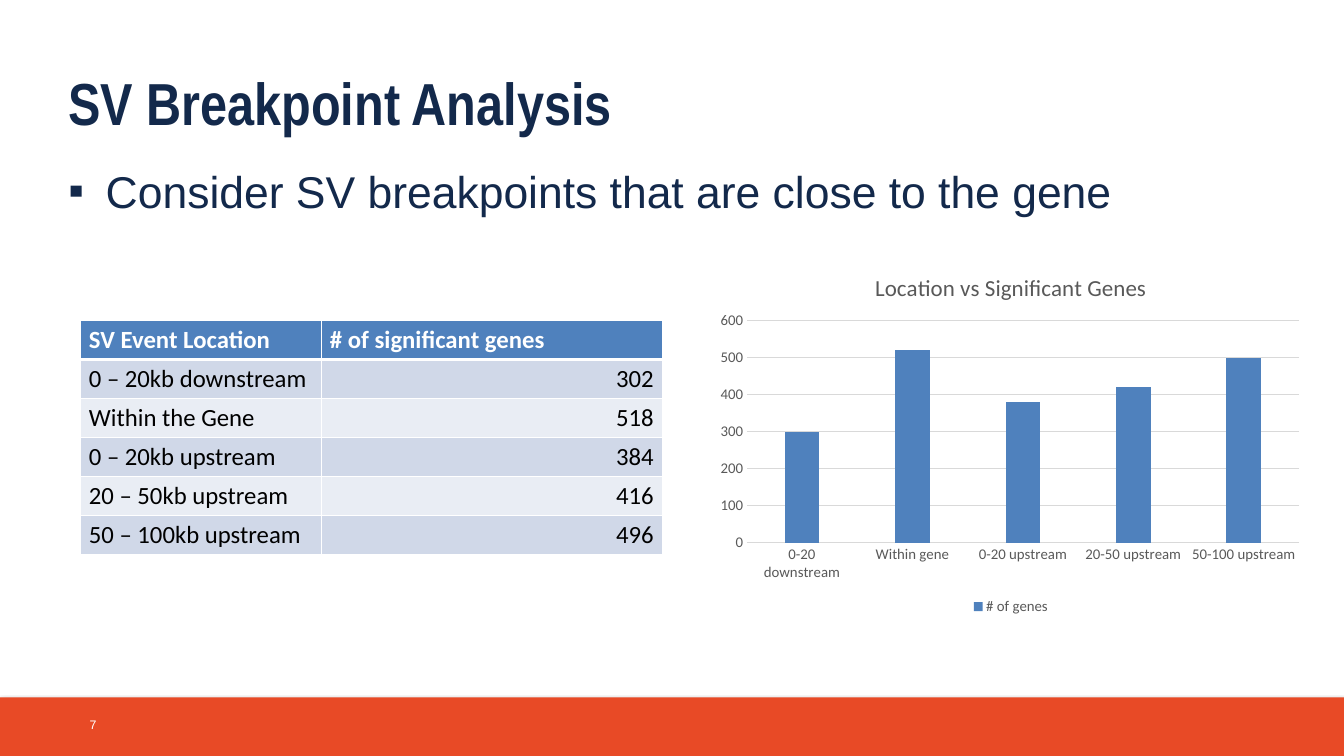
import pptx
import pptx.chart.data
import pptx.dml.color
import pptx.enum.chart
import pptx.enum.shapes
import pptx.enum.text
import pptx.oxml
import pptx.util
from pptx.util import Inches

# Content
TITLE = "SV Breakpoint Analysis"
POINT = "Consider SV breakpoints that are close to the gene"
PAGE_NUMBER = "7"
HEADINGS = ("SV Event Location", "# of significant genes")
CHART_TITLE = "Location vs Significant Genes"
SERIES_NAME = "# of genes"
LOCATIONS = [  # table label, chart label, significant genes
    ("0 – 20kb downstream", "0-20 downstream", 302),
    ("Within the Gene", "Within gene", 518),
    ("0 – 20kb upstream", "0-20 upstream", 384),
    ("20 – 50kb upstream", "20-50 upstream", 416),
    ("50 – 100kb upstream", "50-100 upstream", 496),
]
COLORS = {
    "navy": "13294B", "orange": "E84A26", "blue": "4F81BD", "white": "FFFFFF",
    "black": "000000", "band_dark": "D0D8E8", "band_light": "E9EDF4",
    "grey": "595959", "grid": "D9D9D9",
}
COLUMN_WIDTHS = (2.71, 3.84)
ROW_HEIGHT = 0.44
PLOT_AREA = {"x": 0.06, "y": 0.18, "w": 0.92, "h": 0.61}  # shares of the chart
NS = 'xmlns:a="http://schemas.openxmlformats.org/drawingml/2006/main"'
CHART_NS = 'xmlns:c="http://schemas.openxmlformats.org/drawingml/2006/chart"'
ALIGN = pptx.enum.text.PP_ALIGN
ANCHOR = pptx.enum.text.MSO_ANCHOR


def color(name):
    return pptx.dml.color.RGBColor.from_string(COLORS[name])


def set_font(font, size, color_name, face="Calibri", bold=False):
    font.size = pptx.util.Pt(size)
    font.name = face
    font.bold = bold
    font.color.rgb = color(color_name)


def write(frame, text, *, size, color_name, face="Calibri", bold=False,
          align=ALIGN.LEFT, anchor=ANCHOR.TOP, bullet=None, indent=0):
    frame.word_wrap = True
    frame.vertical_anchor = anchor
    paragraph = frame.paragraphs[0]
    paragraph.alignment = align
    if bullet:
        properties = paragraph._p.get_or_add_pPr()
        properties.set("marL", str(Inches(indent)))
        properties.set("indent", str(-Inches(indent)))
        properties.append(pptx.oxml.parse_xml(f'<a:buFont {NS} typeface="{face}"/>'))
        properties.append(pptx.oxml.parse_xml(f'<a:buChar {NS} char="{bullet}"/>'))
    run = paragraph.add_run()
    run.text = text
    set_font(run.font, size, color_name, face, bold)


def add_text(slide, box, text, **text_format):
    frame = slide.shapes.add_textbox(*map(Inches, box)).text_frame
    write(frame, text, **text_format)


def set_borders(cell, bottom):
    properties = cell._tc.get_or_add_tcPr()
    widths = {"lnL": 1, "lnR": 1, "lnT": 1, "lnB": bottom}
    for position, (side, width) in enumerate(widths.items()):
        properties.insert(position, pptx.oxml.parse_xml(
            f'<a:{side} {NS} w="{pptx.util.Pt(width)}"><a:solidFill>'
            f'<a:srgbClr val="{COLORS["white"]}"/></a:solidFill></a:{side}>'))


def add_footer(slide):
    footer = slide.shapes.add_shape(
        pptx.enum.shapes.MSO_SHAPE.RECTANGLE,
        Inches(0), Inches(7.84), Inches(15.11), Inches(0.66))
    footer.fill.solid()
    footer.fill.fore_color.rgb = color("orange")
    footer.line.fill.background()
    footer.shadow.inherit = False
    effects = footer._element.spPr.find(pptx.oxml.ns.qn("a:effectLst"))
    effects.append(pptx.oxml.parse_xml(
        f'<a:outerShdw {NS} blurRad="{pptx.util.Pt(3.1)}" dist="{pptx.util.Pt(1.8)}" '
        f'dir="5400000" rotWithShape="0"><a:srgbClr val="{COLORS["black"]}">'
        '<a:alpha val="35000"/></a:srgbClr></a:outerShdw>'))
    add_text(slide, (0.91, 7.92, 0.58, 0.45), PAGE_NUMBER, size=10,
             color_name="white", face="Arial", anchor=ANCHOR.MIDDLE)


def add_gene_table(slide):
    rows = [HEADINGS] + [(label, str(genes)) for label, _, genes in LOCATIONS]
    table = slide.shapes.add_table(
        len(rows), len(HEADINGS), Inches(0.9), Inches(3.6),
        Inches(sum(COLUMN_WIDTHS)), Inches(ROW_HEIGHT * len(rows))).table
    for column, width in zip(table.columns, COLUMN_WIDTHS):
        column.width = Inches(width)
    for r, row in enumerate(rows):
        header = r == 0
        band = "blue" if header else ("band_light", "band_dark")[r % 2]
        for c, text in enumerate(row):
            cell = table.cell(r, c)
            cell.fill.solid()
            cell.fill.fore_color.rgb = color(band)
            set_borders(cell, bottom=3 if header else 1)
            write(cell.text_frame, text, size=20, bold=header,
                  color_name="white" if header else "black",
                  align=ALIGN.RIGHT if c and not header else ALIGN.LEFT)


def place_plot(chart):
    plot_area = chart._chartSpace.chart.plotArea
    for layout in plot_area.findall(pptx.oxml.ns.qn("c:layout")):
        plot_area.remove(layout)
    shares = "".join(f'<c:{side} val="{share}"/>' for side, share in PLOT_AREA.items())
    plot_area.insert(0, pptx.oxml.parse_xml(
        f'<c:layout {CHART_NS}><c:manualLayout><c:layoutTarget val="inner"/>'
        f'<c:xMode val="edge"/><c:yMode val="edge"/>{shares}</c:manualLayout></c:layout>'))


def add_gene_chart(slide):
    data = pptx.chart.data.CategoryChartData()
    data.categories = [label for _, label, _ in LOCATIONS]
    data.add_series(SERIES_NAME, [round(genes, -1) for _, _, genes in LOCATIONS])
    chart = slide.shapes.add_chart(
        pptx.enum.chart.XL_CHART_TYPE.COLUMN_CLUSTERED,
        Inches(7.99), Inches(2.87), Inches(6.75), Inches(4.09), data).chart
    set_font(chart.font, 12, "grey")
    place_plot(chart)

    # Title and legend
    chart.has_title = True
    write(chart.chart_title.text_frame, CHART_TITLE, size=18.6, color_name="grey")
    chart.chart_title.include_in_layout = False
    chart.has_legend = True
    chart.legend.position = pptx.enum.chart.XL_LEGEND_POSITION.BOTTOM
    chart.legend.include_in_layout = False
    set_font(chart.legend.font, 12, "grey")

    # Columns
    plot = chart.plots[0]
    plot.gap_width = 219
    plot.overlap = -27
    plot.vary_by_categories = False
    columns = plot.series[0].format.fill
    columns.solid()
    columns.fore_color.rgb = color("blue")

    # Axes
    for axis in (chart.category_axis, chart.value_axis):
        axis.major_tick_mark = pptx.enum.chart.XL_TICK_MARK.NONE
        axis.minor_tick_mark = pptx.enum.chart.XL_TICK_MARK.NONE
        set_font(axis.tick_labels.font, 12, "grey")
    chart.value_axis.minimum_scale = 0
    chart.value_axis.maximum_scale = 600
    chart.value_axis.major_unit = 100
    chart.value_axis.format.line.fill.background()
    for rule in (chart.category_axis, chart.value_axis.major_gridlines):
        rule.format.line.color.rgb = color("grid")
        rule.format.line.width = pptx.util.Pt(0.75)


def main():
    deck = pptx.Presentation()
    deck.slide_width, deck.slide_height = Inches(15.11), Inches(8.5)
    slide = deck.slides.add_slide(deck.slide_layouts[6])
    add_footer(slide)
    add_text(slide, (0.67, 1.79, 13.89, 0.8), POINT, size=36, color_name="navy",
             face="Arial", bullet="▪", indent=0.42)
    add_text(slide, (0.67, 0.69, 13.81, 0.79), TITLE, size=48, color_name="navy",
             face="Arial Narrow", bold=True)
    add_gene_table(slide)
    add_gene_chart(slide)
    deck.save("out.pptx")


if __name__ == "__main__":
    main()
